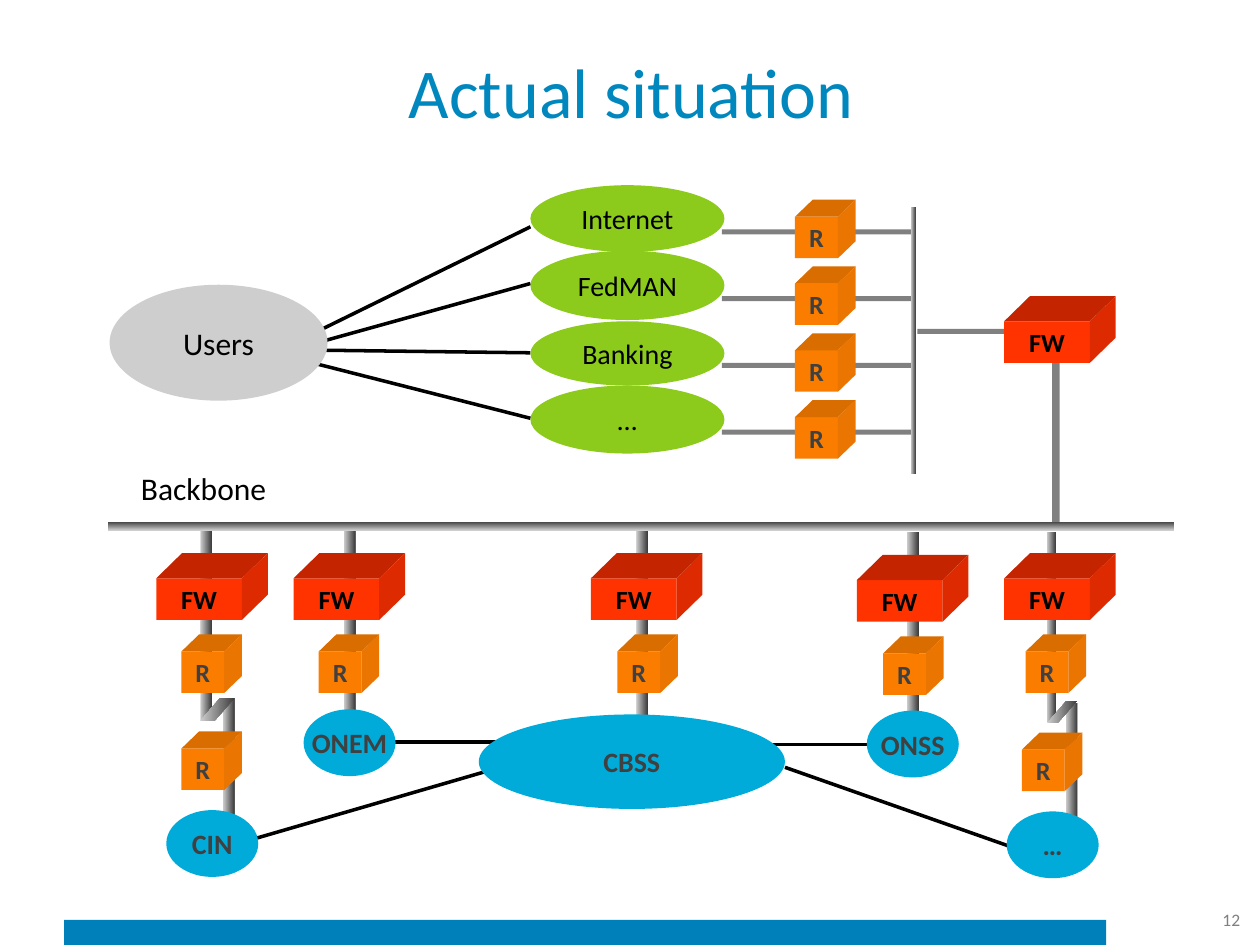
from typing import NamedTuple

from lxml import etree
from pptx import Presentation
from pptx.dml.color import RGBColor
from pptx.enum.shapes import MSO_CONNECTOR, MSO_SHAPE
from pptx.enum.text import MSO_ANCHOR, PP_ALIGN
from pptx.oxml.ns import qn
from pptx.util import Inches, Pt

RECT, OVAL, SLANT = MSO_SHAPE.RECTANGLE, MSO_SHAPE.OVAL, MSO_SHAPE.PARALLELOGRAM
STRAIGHT = MSO_CONNECTOR.STRAIGHT
TOP, MIDDLE = MSO_ANCHOR.TOP, MSO_ANCHOR.MIDDLE
LEFT, CENTER, RIGHT = PP_ALIGN.LEFT, PP_ALIGN.CENTER, PP_ALIGN.RIGHT

COLS, ROWS = 100, 75  # grid of square cells, 0.1 inch each
CELL = Inches(0.1)
HEX = {
    "title": "0087BE", "bar": "0080BB", "black": "000000", "dark": "404040",
    "gray": "808080", "users": "CECECE", "net": "8CCA1C", "site": "00ABDA",
    "light": "CECECE", "deep": "3D3D3D",
}


class Area(NamedTuple):
    x: float
    y: float
    w: float
    h: float


class Kind(NamedTuple):
    label: str
    w: float
    h: float
    dx: float
    dy: float
    front: str
    top: str
    side: str
    ink: str


class Stack(NamedTuple):
    fw: float
    router: float
    drop: float


class Cloud(NamedTuple):
    label: str
    area: Area
    fill: str
    size: int = 16
    ink: str = "black"
    bold: bool = False


FW = Kind("FW", 6.8, 3.3, 2.05, 2, "FF3300", "C42500", "DE2A00", "black")
ROUTER = Kind("R", 3.4, 3.3, 1.4, 1.35, "FA7D00", "DA6D00", "EA7500", "dark")

STACKS = [Stack(12.4, 14.4, 0), Stack(23.3, 25.3, 0), Stack(46.9, 49, 0),
          Stack(68, 70.1, 0.15), Stack(79.7, 81.4, 0)]
USERS = Cloud("Users", Area(8.7, 22.6, 17.3, 9.2), "users", 18)
NETS = [Cloud(name, Area(42.1, y, 15.4, h), "net") for name, y, h in [
    ("Internet", 14.7, 5.3), ("FedMAN", 19.9, 5.5),
    ("Banking", 25.5, 5.1), ("…", 30.6, 5.4)]]
SITES = [Cloud(name, Area(*box), "site", 16, "dark", True) for name, box in [
    ("ONEM", (24.1, 56.3, 7.3, 5.3)), ("CIN", (13.2, 64.3, 7.3, 5.3)),
    ("…", (79.9, 64.4, 7.3, 5.3)), ("ONSS", (68.8, 56.4, 7.3, 5.3)),
    ("CBSS", (38, 56.7, 24.3, 7.5))]]
LINES = [
    (39.7, 58.9, 29.4, 58.9), (62.3, 60.9, 80.5, 67.3),
    (39.7, 60.9, 19.4, 66.8), (70.3, 59.1, 60, 59.1),
    (25.2, 26.3, 42.1, 18), (25.2, 27.2, 42.1, 22.5),
    (25.9, 27.8, 42.1, 28), (25.2, 28.9, 42.1, 33.2),
]
TRUNK = Area(72.3, 16.4, 0.4, 21.2)
PIPES = [Area(x, y + shift, 0.9, 12.4)
         for x, shift in [(15.9, 0), (27.3, 0), (72, 0.1)]
         for y in (44.8, 42.1)]
PIPES += [Area(83.1, 42.2, 0.7, 15.1), Area(50.5, 42.1, 0.9, 18.6),
          Area(17.7, 55.4, 0.9, 12.4), Area(84.6, 55.8, 0.9, 12.4)]
BENDS = [Area(15.9, 55.4, 2.7, 1.8), Area(83.1, 55.6, 2.4, 1.8)]


def cells(*nums: float) -> list[int]:
    return [round(n * CELL) for n in nums]


def rgb(name: str) -> RGBColor:
    return RGBColor.from_string(HEX.get(name, name))


def write(shape, text: str, *, size: int, ink: str = "black", bold: bool = False,
          align=CENTER, anchor=MIDDLE, wrap: bool = False,
          pad: tuple[float, float] = (1, 0.5)) -> None:
    frame = shape.text_frame
    frame.word_wrap = wrap
    frame.vertical_anchor = anchor
    frame.margin_left = frame.margin_right = cells(pad[0])[0]
    frame.margin_top = frame.margin_bottom = cells(pad[1])[0]
    frame.text = text
    para = frame.paragraphs[0]
    para.alignment = align
    font = para.runs[0].font
    font.name, font.size, font.bold = "Calibri", Pt(size), bold
    font.color.rgb = rgb(ink)


def paint(shape, fill: str) -> None:
    shape.shadow.inherit = False
    shape.fill.solid()
    shape.fill.fore_color.rgb = rgb(fill)
    shape.line.fill.background()


def block(slide, area: Area, fill: str, form=RECT):
    shape = slide.shapes.add_shape(form, *cells(*area))
    paint(shape, fill)
    return shape


def pipe(slide, area: Area, form=RECT, ends=("light", "deep"), angle: int = 0):
    """Draw a bar shaded from one end colour to the other."""
    shape = block(slide, area, ends[0], form)
    shape.fill.gradient()
    shape.fill.gradient_angle = angle
    for stop, name in zip(shape.fill.gradient_stops, ends):
        stop.color.rgb = rgb(name)
    return shape


def face(slide, points: list[tuple[float, float]], fill: str) -> None:
    first, *rest = [tuple(cells(*p)) for p in points]
    path = slide.shapes.build_freeform(*first)
    path.add_line_segments(rest, close=True)
    paint(path.convert_to_shape(), fill)


def cube(slide, kind: Kind, x: float, y: float) -> None:
    """Draw a labelled box with its front's top left corner at x, y."""
    front = block(slide, Area(x, y, kind.w, kind.h), kind.front)
    write(front, kind.label, size=15, ink=kind.ink, bold=True, pad=(0.8, 0.4))
    end, base, dx, dy = x + kind.w, y + kind.h, kind.dx, kind.dy
    face(slide, [(x, y), (x + dx, y - dy), (end + dx, y - dy), (end, y)], kind.top)
    face(slide, [(end, y), (end + dx, y - dy), (end + dx, base - dy), (end, base)],
         kind.side)


def cloud(slide, item: Cloud) -> None:
    shape = block(slide, item.area, item.fill, OVAL)
    write(shape, item.label, size=item.size, ink=item.ink, bold=item.bold)


def join(slide, ends: tuple[float, float, float, float]) -> None:
    line = slide.shapes.add_connector(STRAIGHT, *cells(*ends))
    line.line.color.rgb = rgb("black")
    line.line.width = Pt(2)
    etree.SubElement(line._element.spPr, qn("a:effectLst"))


def label(slide, area: Area, text: str, **form) -> None:
    write(slide.shapes.add_textbox(*cells(*area)), text, wrap=True, **form)


def main() -> None:
    deck = Presentation()
    deck.slide_width, deck.slide_height = cells(COLS, ROWS)
    slide = deck.slides.add_slide(deck.slide_layouts[5])
    title = slide.shapes.title
    title.left, title.top, title.width, title.height = cells(5.1, 2.1, 90, 10.1)
    write(title, "Actual situation", size=40, ink="title", wrap=True)
    block(slide, Area(5.1, 73, 82.7, 2), "bar")
    label(slide, Area(91.2, 71, 8.2, 4), "12", size=10, ink="gray", align=RIGHT)

    for area in PIPES:
        pipe(slide, area)
    for area in BENDS:
        pipe(slide, area, SLANT).adjustments[0] = 0.875
    for ends in LINES:
        join(slide, ends)

    block(slide, Area(72.8, 26.1, 15.5, 0.4), "gray")
    block(slide, Area(83.5, 28.8, 0.6, 13.3), "gray")
    for row, net in enumerate(NETS):
        y = 17.2 + 5.3 * row
        block(slide, Area(57.3, y + 1, 15.4, 0.4), "gray")
        cube(slide, ROUTER, 63.1, y)
        cloud(slide, net)
    pipe(slide, TRUNK)
    cloud(slide, USERS)
    cube(slide, FW, 79.7, 25.5)

    for stack in STACKS:
        cube(slide, FW, stack.fw, 45.9 + stack.drop)
        cube(slide, ROUTER, stack.router, 51.7 + stack.drop)
    for x, y in [(14.4, 59.4), (81.1, 59.5)]:
        cube(slide, ROUTER, x, y)
    for site in SITES:
        cloud(slide, site)

    pipe(slide, Area(8.6, 41.4, 84.6, 0.7), ends=("deep", "light"), angle=270)
    label(slide, Area(10.2, 36.7, 19.9, 4), "Backbone", size=18, align=LEFT, anchor=TOP)
    deck.save("out.pptx")


if __name__ == "__main__":
    main()
